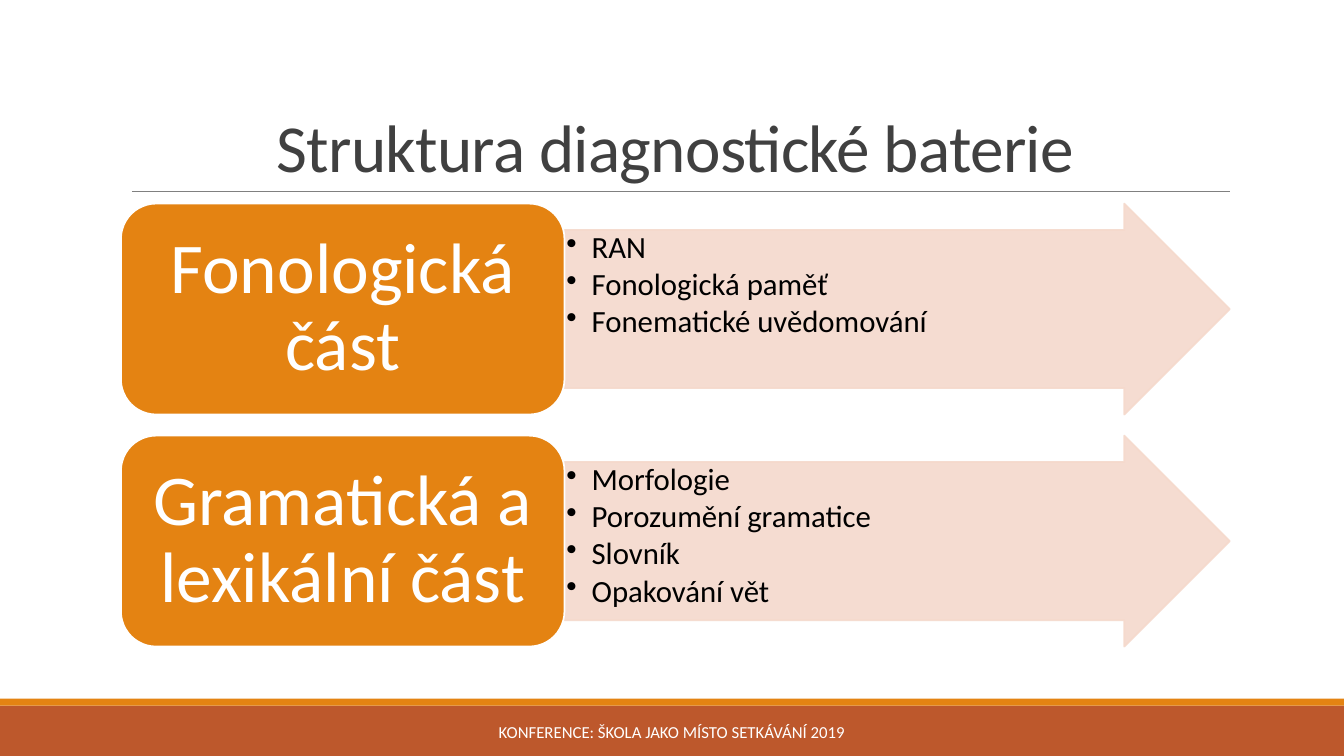
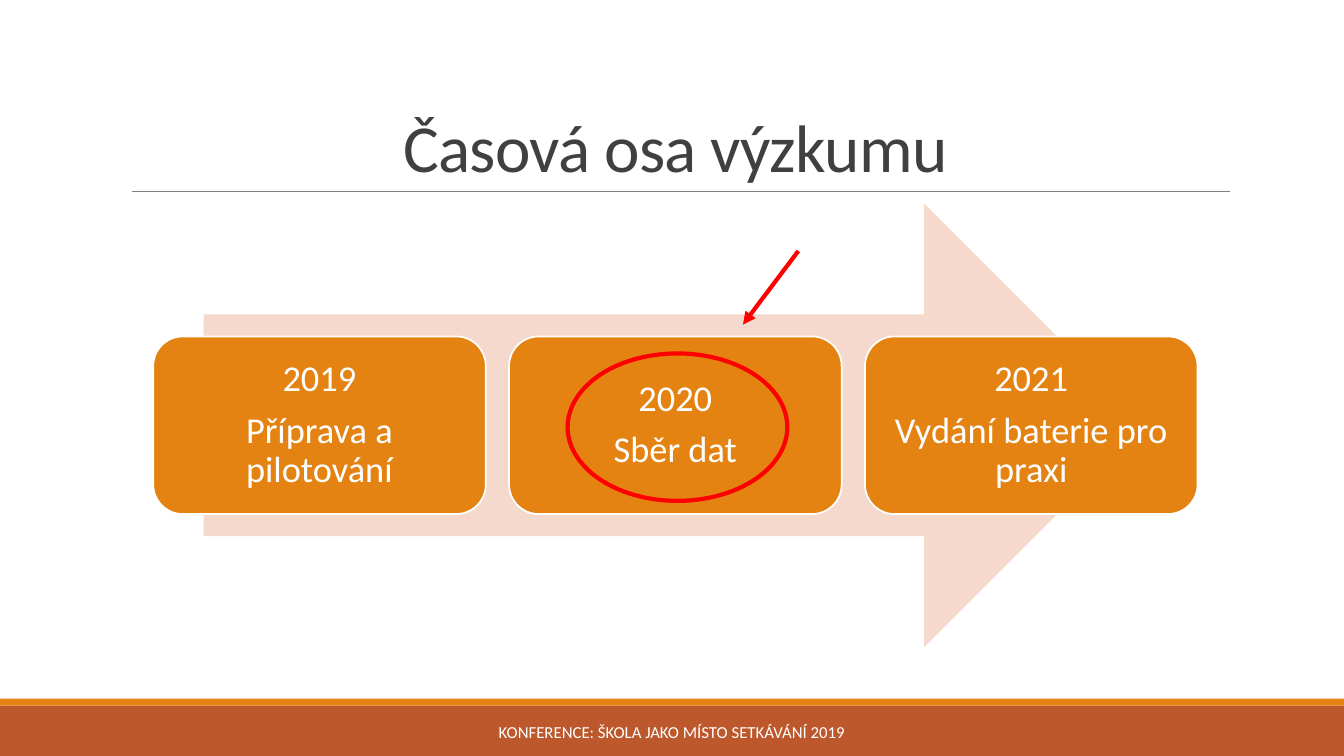
import dataclasses

import pptx
import pptx.dml.color
import pptx.enum.shapes
import pptx.enum.text
import pptx.oxml.ns
import pptx.util
from lxml import etree

Pt, Inches = pptx.util.Pt, pptx.util.Inches
RGB = pptx.dml.color.RGBColor.from_string
Kind = pptx.enum.shapes.MSO_SHAPE
Align = pptx.enum.text.PP_ALIGN
Anchor = pptx.enum.text.MSO_ANCHOR
qn = pptx.oxml.ns.qn


@dataclasses.dataclass(frozen=True)
class Theme:
    font: str = "Calibri"
    rust: str = "BD582C"
    amber: str = "E48312"
    peach: str = "F5D9CC"
    white: str = "FFFFFF"
    black: str = "000000"
    ink: str = "404040"
    grey: str = "808080"
    red: str = "FF0000"
    title: int = 48
    label: int = 51
    step: int = 26
    item: int = 22
    foot: int = 12


look = Theme()
deck = pptx.Presentation()
deck.slide_width, deck.slide_height = Inches(13.333), Inches(7.5)

# The grid has 100 columns and 100 rows.
col, row = deck.slide_width / 100, deck.slide_height / 100


def put(page, kind, box, fill=None, line=None, width=1.25, alpha=None):
    """Add a shape, or a text box if kind is None; box is in columns and rows."""
    x, y, w, h = box
    place = [int(x * col), int(y * row), int(w * col), int(h * row)]
    if kind is None:
        return page.shapes.add_textbox(*place)
    shape = page.shapes.add_shape(kind, *place)
    shape.shadow.inherit = False
    for paint, tone in ((shape.fill, fill), (shape.line.fill, line)):
        if tone:
            paint.solid()
            paint.fore_color.rgb = RGB(tone)
        else:
            paint.background()
    if line:
        shape.line.width = Pt(width)
    if alpha:
        for tone in shape._element.spPr.iter(qn("a:srgbClr")):
            etree.SubElement(tone, qn("a:alpha"), val=str(alpha * 1000))
    return shape


def write(shape, lines, size, color=look.white, align=Align.CENTER,
          anchor=Anchor.MIDDLE, pad=(0.1, 0.05), lead=0.9, after=0,
          track=0, bullet=False):
    frame = shape.text_frame
    frame.word_wrap = True
    frame.vertical_anchor = anchor
    frame.margin_left = frame.margin_right = Inches(pad[0])
    frame.margin_top = frame.margin_bottom = Inches(pad[1])
    for n, line in enumerate(lines):
        para = frame.paragraphs[0] if n == 0 else frame.add_paragraph()
        para.alignment = align
        para.line_spacing = lead
        para.space_after = Pt(after)
        run = para.add_run()
        run.text = line
        run.font.name = look.font
        run.font.size = Pt(size)
        run.font.color.rgb = RGB(color)
        if track:
            run._r.get_or_add_rPr().set("spc", str(int(track * 100)))
        if bullet:
            props = para._p.get_or_add_pPr()
            props.set("marL", str(Inches(0.25)))
            props.set("indent", str(-Inches(0.25)))
            etree.SubElement(props, qn("a:buChar"), char="•")


# Frame of both slides
pages = []
for title in ("Struktura diagnostické baterie", "Časová osa výzkumu"):
    page = deck.slides.add_slide(deck.slide_layouts[6])
    put(page, Kind.RECTANGLE, (0, 93.33, 100, 6.67), look.rust)
    put(page, Kind.RECTANGLE, (0, 92.4, 100, 0.93), look.amber)
    rule = (9.82, 25.33, 91.55, 25.33, look.grey, 0.5)
    head = put(page, None, (9, 4.13, 82.5, 21.2))
    write(head, [title], look.title, color=look.ink, anchor=Anchor.BOTTOM,
          lead=0.85, track=-0.5)
    foot = put(page, None, (30.25, 94.13, 39.5, 5.33))
    write(foot, ["KONFERENCE: ŠKOLA JAKO MÍSTO SETKÁVÁNÍ 2019"], look.foot, lead=1)
    pages.append((page, [rule]))

# Slide 1: two halves of the test battery
top, left, wide, high = 26.93, 9, 33, 27.9
halves = [
    ("Fonologická část", ["RAN", "Fonologická paměť", "Fonematické uvědomování"]),
    ("Gramatická a lexikální část",
     ["Morfologie", "Porozumění gramatice", "Slovník", "Opakování vět"]),
]
page = pages[0][0]
for n, (name, items) in enumerate(halves):
    y = top + n * high * 1.1
    arrow = put(page, Kind.RIGHT_ARROW, (left + wide, y, wide * 1.5, high),
                look.peach, look.peach, alpha=90)
    arrow.adjustments[0] = 0.75
    write(arrow, items, look.item, color=look.black, align=Align.LEFT,
          anchor=Anchor.TOP, pad=(0.02, 0.02), after=2.8, bullet=True)
    label = put(page, Kind.ROUNDED_RECTANGLE, (left, y, wide, high),
                look.amber, look.white)
    write(label, [name], look.label, pad=(0.21, 0.11))

# Slide 2: three years on one arrow
page, lines = pages[1]
put(page, Kind.RIGHT_ARROW, (15.15, top, 70.12, 58.67), look.peach)
steps = [
    ("2019", "Příprava a pilotování"),
    ("2020", "Sběr dat"),
    ("2021", "Vydání baterie pro praxi"),
]
for n, step in enumerate(steps):
    card = put(page, Kind.ROUNDED_RECTANGLE, (11.4 + n * 26.48, 44.5, 24.75, 23.5),
               look.amber, look.white)
    write(card, step, look.step, pad=(0.11, 0.11), after=8.6)
put(page, Kind.OVAL, (42.23, 46.75, 16.35, 19.5), line=look.red, width=3)
lines.append((59.4, 33.2, 55.28, 42.93, look.red, 3))

# Title rules, and the red pointer with its arrowhead
for page, lines in pages:
    for x, y, right, low, tone, width in lines:
        link = page.shapes.add_connector(
            pptx.enum.shapes.MSO_CONNECTOR.STRAIGHT,
            int(x * col), int(y * row), int(right * col), int(low * row))
        link.line.color.rgb = RGB(tone)
        link.line.width = Pt(width)
        if tone == look.red:
            etree.SubElement(link.line._get_or_add_ln(), qn("a:tailEnd"),
                             type="triangle")
        etree.SubElement(link._element.spPr, qn("a:effectLst"))

deck.save("out.pptx")
